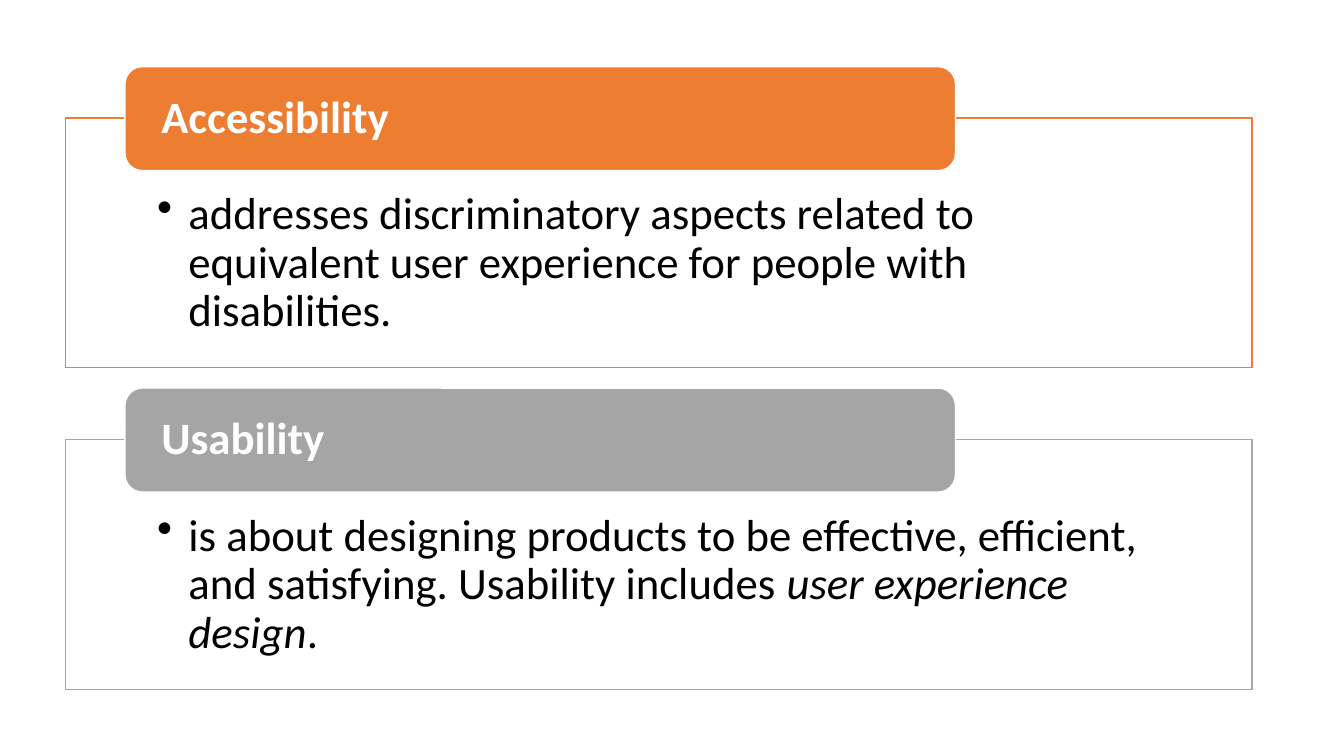
import pptx
import pptx.dml.color
import pptx.enum.shapes
import pptx.enum.text
import pptx.oxml
import pptx.oxml.ns
import pptx.util
from lxml import etree

Cm, Pt = pptx.util.Cm, pptx.util.Pt
SHAPES = pptx.enum.shapes.MSO_SHAPE
ANCHORS = pptx.enum.text.MSO_ANCHOR
qn = pptx.oxml.ns.qn

COLORS = {
    "white": "FFFFFF",
    "black": "000000",
    "orange": "ED7D31",
    "gray": "A5A5A5",
}

# Each topic: title, colour, and its description as (text, italic) runs.
TOPICS = [
    ("Accessibility", "orange", [
        ("addresses discriminatory aspects related to equivalent user experience "
         "for people with disabilities. ", False),
    ]),
    ("Usability", "gray", [
        ("is about designing products to be effective, efficient, "
         "and satisfying. Usability includes ", False),
        ("user experience design", True),
        (".", False),
    ]),
]
FIRST_TOP, PITCH = 1.68, 8.1
BODY_OFFSET = 1.29


class TopicSlide:
    font = "Calibri"
    size = 32
    indent = 0.79

    def __init__(self, prs):
        self.slide = prs.slides.add_slide(prs.slide_layouts[6])

    def color(self, name):
        return pptx.dml.color.RGBColor.from_string(COLORS[name])

    def box(self, kind, place, fill, line, margins):
        """Add a filled, outlined shape; place and margins are in cm."""
        s = self.slide.shapes.add_shape(kind, *map(Cm, place))
        s.shadow.inherit = False
        s.fill.solid()
        s.fill.fore_color.rgb = self.color(fill)
        s.line.color.rgb = self.color(line)
        s.line.width = Pt(1)
        tf = s.text_frame
        tf.word_wrap = True
        tf.margin_left, tf.margin_top, tf.margin_right, tf.margin_bottom = map(Cm, margins)
        return s

    def style(self, p, color, bold=False):
        p.alignment = pptx.enum.text.PP_ALIGN.LEFT
        p.line_spacing = 0.9
        p.font.name = self.font
        p.font.size = Pt(self.size)
        p.font.bold = bold
        p.font.color.rgb = self.color(color)

    def bullet(self, p):
        pPr = p._p.get_or_add_pPr()
        pPr.set("marL", str(Cm(self.indent)))
        pPr.set("indent", str(-Cm(self.indent)))
        bullet = pptx.oxml.parse_xml(
            '<a:buChar xmlns:a="http://schemas.openxmlformats.org/drawingml/2006/main" char="•"/>')
        pPr.insert_element_before(bullet, "a:tabLst", "a:defRPr", "a:extLst")

    def body(self, top, line, runs):
        s = self.box(SHAPES.RECTANGLE, (1.65, top, 29.9, 6.3),
                     "white", line, (2.31, 1.85, 2.31, 0.64))
        fill = s.fill._xPr.find(qn("a:solidFill"))
        etree.SubElement(fill[0], qn("a:alpha"), val="90000")
        s.text_frame.vertical_anchor = ANCHORS.TOP
        p = s.text_frame.paragraphs[0]
        p.level = 1
        self.style(p, "black")
        self.bullet(p)
        for text, italic in runs:
            r = p.add_run()
            r.text = text
            r.font.italic = italic

    def header(self, top, fill, title):
        s = self.box(SHAPES.ROUNDED_RECTANGLE, (3.15, top, 20.93, 2.62),
                     fill, "white", (self.indent, 0, self.indent, 0))
        s.text_frame.vertical_anchor = ANCHORS.MIDDLE
        p = s.text_frame.paragraphs[0]
        p.text = title
        self.style(p, "white", bold=True)


def main():
    prs = pptx.Presentation()
    prs.slide_width, prs.slide_height = Cm(33.87), Cm(19.05)
    page = TopicSlide(prs)
    for i, (title, color, runs) in enumerate(TOPICS):
        top = FIRST_TOP + i * PITCH
        page.body(top + BODY_OFFSET, color, runs)
        page.header(top, color, title)
    prs.save("out.pptx")


if __name__ == "__main__":
    main()
